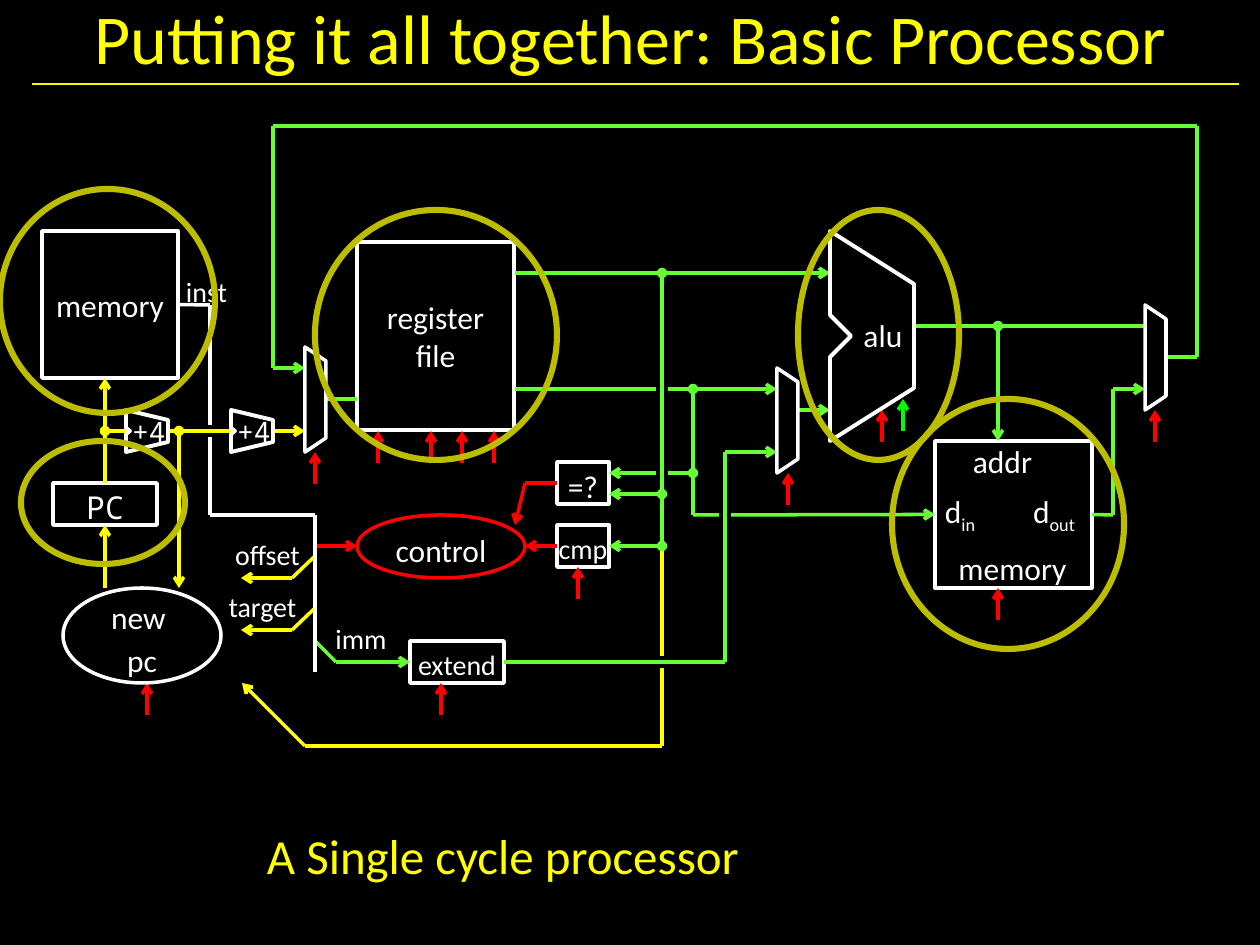
from dataclasses import dataclass

from lxml.etree import SubElement
from pptx import Presentation
from pptx.dml.color import RGBColor
from pptx.enum.shapes import MSO_CONNECTOR, MSO_SHAPE
from pptx.enum.text import MSO_ANCHOR, PP_ALIGN
from pptx.oxml.ns import qn
from pptx.util import Emu, Pt

EMU_PER_PX = 914400 / 126


@dataclass(frozen=True)
class Theme:
    background: str = "000000"
    ink: str = "FFFFFF"
    control: str = "FF0000"
    data: str = "66FF33"
    alu_control: str = "00FF00"
    program: str = "FFFF00"
    rule: str = "F9F900"
    highlight: str = "BDBD00"
    font: str = "Calibri"
    mono: str = "Noto Sans Mono"
    title: int = 40
    caption: int = 28
    label: int = 18
    small: int = 16
    wire: float = 2
    unit: float = 2.25
    gap: float = 7
    ring: float = 3.5
    hairline: float = 0.75


THEME = Theme()
BODY = {"size": THEME.label, "spacing": 1.16}
SMALL = {"size": THEME.small, "spacing": 1.16}
TIGHT = {"inset": (0, 6)}
LOOSE = {"wrap": False}
WIRE_TEXT = {**SMALL, **LOOSE, "inset": (0, 0)}
ADDER_TEXT = {**WIRE_TEXT, "font": THEME.mono}

# box (left, top, width, height), text, text format
BLOCKS = [
    ((42, 231, 136, 147), "memory", {}),
    ((53, 483, 104, 42), "PC", {**BODY, "font": THEME.mono}),
    ((357, 242, 157, 188), "register\vfile", {}),
    ((557, 462, 52, 42), "=?", {**BODY, **TIGHT}),
    ((557, 525, 52, 42), "cmp", {**SMALL, **TIGHT}),
    ((410, 641, 94, 42), "extend", {**SMALL, **TIGHT}),
    ((935, 441, 157, 147), "", {}),
]
BUBBLES = [
    ((357, 515, 168, 63), "control", THEME.control),
    ((63, 588, 158, 95), "new \vpc", THEME.ink),
]
LABELS = [
    ((32, 0, 1197, 73), "Putting it all together: Basic Processor",
     {"size": THEME.title, "color": THEME.program}),
    ((254, 819, 503, 72), "A Single cycle processor",
     {**LOOSE, "size": THEME.caption, "color": THEME.program,
      "align": PP_ALIGN.LEFT, "anchor": MSO_ANCHOR.TOP}),
    ((323, 620, 76, 32), "imm", WIRE_TEXT),
    ((226, 588, 73, 32), "target", WIRE_TEXT),
    ((231, 536, 73, 32), "offset", WIRE_TEXT),
    ((179, 273, 55, 32), "inst", WIRE_TEXT),
    ((945, 536, 135, 57), "memory", BODY),
    ((924, 483, 72, 54), "d", {**BODY, "subscript": "in"}),
    ((1018, 483, 72, 54), "d", {**BODY, "subscript": "out"}),
    ((935, 431, 135, 54), "addr", BODY),
    ((851, 305, 64, 54), "alu", {**BODY, **LOOSE, **TIGHT}),
    ((129, 413, 40, 32), "+4", ADDER_TEXT),
    ((234, 413, 40, 32), "+4", ADDER_TEXT),
]
MUX = [(0, 0), (21, 14), (21, 91), (0, 105)]
ADDER = [(0, 0), (42, 10), (42, 32), (0, 42), (0, 24), (4, 21), (0, 18)]
ALU = [(0, 0), (84, 53), (84, 157), (0, 210), (0, 126), (21, 105), (0, 84)]
# outline, places, fill, line width
UNITS = [
    (MUX, [(305, 347), (777, 368), (1145, 305)], None, THEME.wire),
    (ADDER, [(126, 410), (231, 410)], THEME.background, THEME.unit),
    (ALU, [(830, 231)], None, THEME.unit),
]
HIGHLIGHTS = [
    (892, 399, 232, 250), (0, 189, 215, 224), (798, 210, 161, 250),
    (315, 210, 242, 250), (21, 441, 164, 123),
]

# colour, points along the wire, start mark, end mark
LOWER_WIRES = [
    (THEME.control, [(315, 546), (357, 546)], None, "arrow"),
    (THEME.control, [(557, 546), (525, 546)], None, "arrow"),
    (THEME.control, [(557, 483), (525, 483), (515, 525)], None, "arrow"),
    (THEME.data, [(515, 273), (830, 273)], None, "arrow"),
    (THEME.data, [(515, 389), (777, 389)], None, "arrow"),
    (THEME.data, [(914, 326), (1145, 326)], None, None),
    (THEME.data, [(1166, 357), (1197, 357), (1197, 126), (273, 126),
                  (273, 368), (305, 368)], None, "arrow"),
    (THEME.data, [(725, 452), (777, 452)], None, "arrow"),
    (THEME.data, [(693, 389), (693, 515), (935, 515)], "oval", "arrow"),
    (THEME.data, [(693, 473), (609, 473)], "oval", "arrow"),
    (THEME.data, [(662, 494), (609, 494)], "oval", "arrow"),
    (THEME.data, [(662, 546), (609, 546)], None, "arrow"),
    (THEME.data, [(998, 326), (998, 441)], "oval", "arrow"),
    (THEME.data, [(1092, 515), (1113, 515), (1113, 389), (1145, 389)], None, "arrow"),
    (THEME.data, [(315, 641), (336, 662), (410, 662)], None, "arrow"),
    (THEME.data, [(357, 399), (326, 399)], None, None),
    (THEME.data, [(798, 410), (830, 410)], None, "arrow"),
    (THEME.alu_control, [(903, 431), (903, 399)], None, "arrow"),
    (THEME.program, [(105, 483), (105, 378)], None, "arrow"),
    (THEME.program, [(105, 588), (105, 525)], None, "arrow"),
    (THEME.program, [(179, 431), (179, 588)], "oval", "arrow"),
    (THEME.program, [(314, 557), (292, 578), (241, 578)], None, "arrow"),
    (THEME.program, [(314, 609), (292, 630), (241, 630)], None, "arrow"),
    (THEME.program, [(662, 546), (662, 746), (305, 746), (242, 683)], None, "arrow"),
    (THEME.ink, [(178, 305), (210, 305), (210, 515), (315, 515), (315, 672)], None, None),
]
CROSSING_GAPS = [
    [(199, 431), (231, 431)], [(651, 662), (683, 662)], [(662, 378), (662, 399)],
    [(662, 462), (662, 483)], [(725, 504), (725, 525)],
]
UPPER_WIRES = [
    (THEME.program, [(105, 431), (305, 431)], "oval", "arrow"),
    (THEME.data, [(504, 662), (725, 662), (725, 452)], None, None),
    (THEME.data, [(662, 546), (662, 273)], "oval", "oval"),
    (THEME.data, [(788, 273), (830, 273)], None, "arrow"),
    (THEME.data, [(945, 326), (914, 326)], None, None),
]
CONTROL_TIPS = [
    (315, 452), (378, 431), (431, 431), (462, 431), (494, 431), (578, 567),
    (788, 473), (882, 410), (998, 588), (1155, 410), (441, 683), (147, 683),
]
CONTROL_LENGTH = 32


def px(value):
    return Emu(round(value * EMU_PER_PX))


def style(shape, line, width, fill=None):
    shape.shadow.inherit = False
    if fill:
        shape.fill.solid()
        shape.fill.fore_color.rgb = RGBColor.from_string(fill)
    else:
        shape.fill.background()
    shape.line.color.rgb = RGBColor.from_string(line)
    shape.line.width = Pt(width)


def write(shape, text, size=THEME.label, font=THEME.font, color=THEME.ink, spacing=None,
          wrap=True, inset=(13, 6), align=PP_ALIGN.CENTER, anchor=MSO_ANCHOR.MIDDLE,
          subscript=""):
    across, down = map(px, inset)
    frame_format = {"word_wrap": wrap, "vertical_anchor": anchor,
                    "margin_left": across, "margin_right": across,
                    "margin_top": down, "margin_bottom": down}
    for name, value in frame_format.items():
        setattr(shape.text_frame, name, value)
    paragraph = shape.text_frame.paragraphs[0]
    paragraph.text = text
    paragraph.alignment = align
    paragraph.line_spacing = spacing
    if subscript:
        run = paragraph.add_run()
        run.text = subscript
        run._r.get_or_add_rPr().set("baseline", "-25000")
    for run in paragraph.runs:
        for name, value in {"size": Pt(size), "name": font}.items():
            setattr(run.font, name, value)
        run.font.color.rgb = RGBColor.from_string(color)


def add_outlined(shapes, kind, box, line, width=THEME.wire, fill=None):
    shape = shapes.add_shape(kind, *map(px, box))
    style(shape, line, width, fill)
    return shape


def find_site(point, blocks):
    """Return the block and side whose middle lies at the point, if any."""
    for (left, top, width, height), block in blocks:
        middle, centre = left + width / 2, top + height / 2
        sides = [(middle, top), (left, centre), (middle, top + height), (left + width, centre)]
        for index, (x, y) in enumerate(sides):
            if abs(point[0] - x) <= 1 and abs(point[1] - y) <= 1:
                return block, index
    return None


def add_wire(shapes, color, points, start=None, end=None, width=THEME.wire, blocks=()):
    """Draw one connector per stretch, with marks only at the wire's two ends."""
    last = len(points) - 2
    for index, (begin, finish) in enumerate(zip(points, points[1:])):
        connector = shapes.add_connector(MSO_CONNECTOR.STRAIGHT, *map(px, begin + finish))
        connector.line.color.rgb = RGBColor.from_string(color)
        connector.line.width = Pt(width)
        marks = {"a:headEnd": start if index == 0 else None,
                 "a:tailEnd": end if index == last else None}
        for tag, mark in marks.items():
            if mark:
                SubElement(connector.line._get_or_add_ln(), qn(tag), type=mark)
        SubElement(connector._element.spPr, qn("a:effectLst"))
        for point, connect in ((begin, connector.begin_connect), (finish, connector.end_connect)):
            site = find_site(point, blocks)
            if site:
                connect(*site)


def main():
    presentation = Presentation()
    presentation.slide_width, presentation.slide_height = px(1260), px(945)
    slide = presentation.slides.add_slide(presentation.slide_layouts[6])
    slide.background.fill.solid()
    slide.background.fill.fore_color.rgb = RGBColor.from_string(THEME.background)
    shapes = slide.shapes

    add_wire(shapes, THEME.rule, [(32, 84), (1239, 84)], width=THEME.hairline)
    blocks = []
    for box, text, text_format in BLOCKS:
        block = add_outlined(shapes, MSO_SHAPE.RECTANGLE, box, THEME.ink)
        if text:
            write(block, text, **text_format)
        blocks.append((box, block))

    for wire in LOWER_WIRES:
        add_wire(shapes, *wire, blocks=blocks)
    for points in CROSSING_GAPS:
        add_wire(shapes, THEME.background, points, width=THEME.gap)
    for wire in UPPER_WIRES:
        add_wire(shapes, *wire, blocks=blocks)
    for x, y in CONTROL_TIPS:
        add_wire(shapes, THEME.control, [(x, y + CONTROL_LENGTH), (x, y)], end="arrow")

    for box, text, line in BUBBLES:
        bubble = add_outlined(shapes, MSO_SHAPE.OVAL, box, line, fill=THEME.background)
        write(bubble, text, **BODY, **LOOSE)
    for outline, places, fill, width in UNITS:
        for left, top in places:
            corners = [(left + x, top + y) for x, y in outline]
            builder = shapes.build_freeform(*corners[0], scale=EMU_PER_PX)
            builder.add_line_segments(corners[1:], close=True)
            style(builder.convert_to_shape(), THEME.ink, width, fill)
    for box, text, text_format in LABELS:
        write(shapes.add_textbox(*map(px, box)), text, **text_format)
    for box in HIGHLIGHTS:
        add_outlined(shapes, MSO_SHAPE.OVAL, box, THEME.highlight, THEME.ring)

    presentation.save("out.pptx")


if __name__ == "__main__":
    main()
